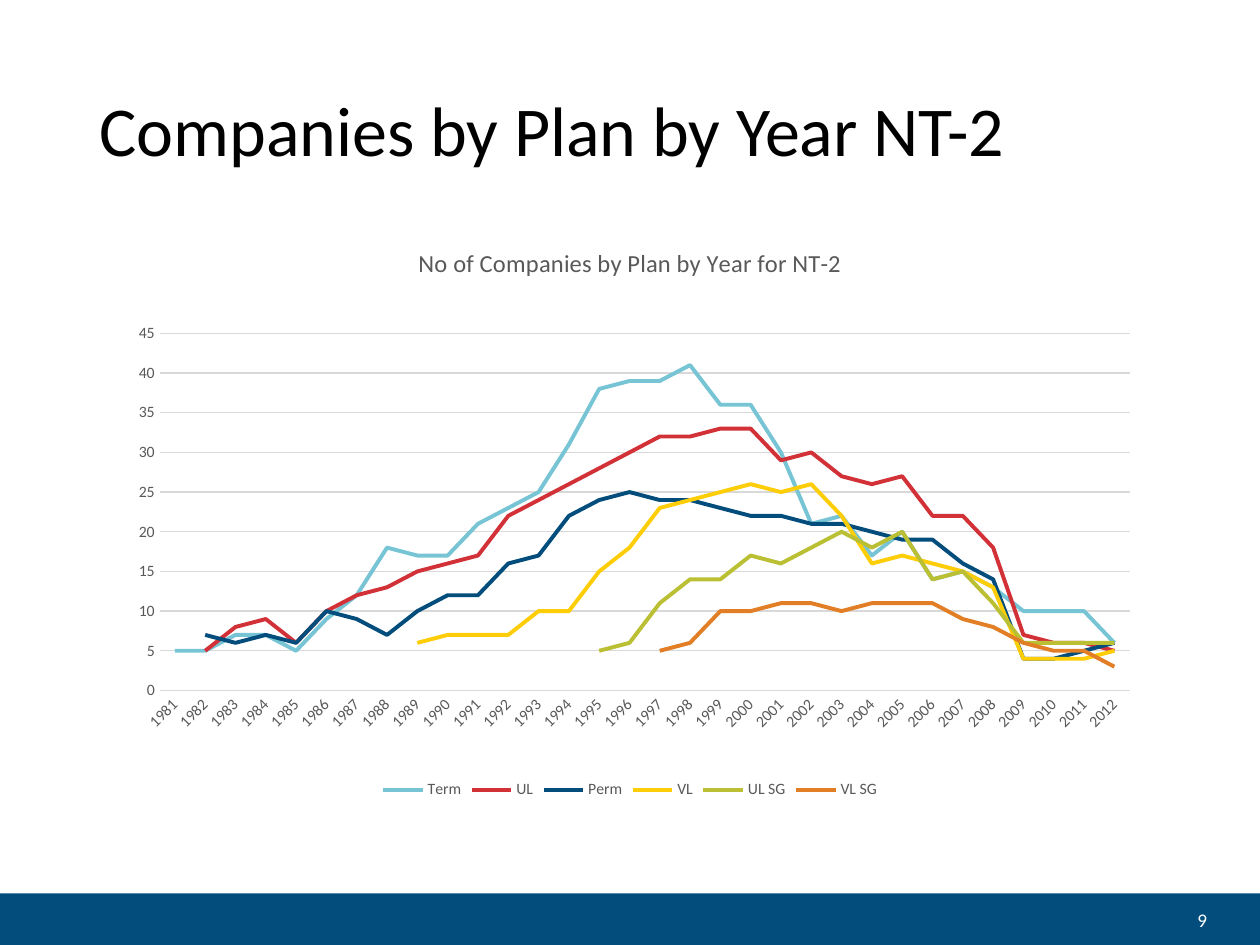
from dataclasses import dataclass

from lxml import etree
from pptx import Presentation
from pptx import util as u
from pptx.chart.data import CategoryChartData
from pptx.dml.color import RGBColor
from pptx.enum import chart as charts, shapes, text
from pptx.oxml.ns import qn

FONT = "Calibri"
BLACK = RGBColor(0x00, 0x00, 0x00)
WHITE = RGBColor(0xFF, 0xFF, 0xFF)
GREY = RGBColor(0x59, 0x59, 0x59)
RULE = RGBColor(0xD9, 0xD9, 0xD9)
NAVY = RGBColor(0x02, 0x4D, 0x7C)
AQUA = RGBColor(0x77, 0xC4, 0xD5)
RED = RGBColor(0xD2, 0x31, 0x38)
YELLOW = RGBColor(0xFD, 0xCE, 0x07)
LIME = RGBColor(0xBA, 0xBF, 0x33)
ORANGE = RGBColor(0xE2, 0x7F, 0x26)
YEARS = range(1981, 2013)


@dataclass
class Plan:
    name: str
    color: RGBColor
    companies: list[int]

    def by_year(self) -> list[int | None]:
        return [None] * (len(YEARS) - len(self.companies)) + self.companies


@dataclass
class Label:
    wording: str
    left: float
    top: float
    width: float
    height: float
    size: float
    color: RGBColor
    align: text.PP_ALIGN
    spacing: float = 1.0


PLANS = [
    Plan("Term", AQUA, [5, 5, 7, 7, 5, 9, 12, 18, 17, 17, 21, 23, 25, 31, 38, 39, 39, 41,
                        36, 36, 30, 21, 22, 17, 20, 14, 15, 13, 10, 10, 10, 6]),
    Plan("UL", RED, [5, 8, 9, 6, 10, 12, 13, 15, 16, 17, 22, 24, 26, 28, 30, 32, 32, 33,
                     33, 29, 30, 27, 26, 27, 22, 22, 18, 7, 6, 6, 5]),
    Plan("Perm", NAVY, [7, 6, 7, 6, 10, 9, 7, 10, 12, 12, 16, 17, 22, 24, 25, 24, 24, 23,
                        22, 22, 21, 21, 20, 19, 19, 16, 14, 4, 4, 5, 6]),
    Plan("VL", YELLOW, [6, 7, 7, 7, 10, 10, 15, 18, 23, 24, 25, 26, 25, 26, 22, 16, 17,
                        16, 15, 13, 4, 4, 4, 5]),
    Plan("UL SG", LIME, [5, 6, 11, 14, 14, 17, 16, 18, 20, 18, 20, 14, 15, 11, 6, 6, 6, 6]),
    Plan("VL SG", ORANGE, [5, 6, 10, 10, 11, 11, 10, 11, 11, 11, 9, 8, 6, 5, 5, 3]),
]
LABELS = [
    Label("Companies by Plan by Year NT-2", 0.69, 0.36, 8.62, 1.4, 40, BLACK,
          text.PP_ALIGN.LEFT, 0.9),
    Label("9", 9.01, 7.1, 0.67, 0.4, 11, WHITE, text.PP_ALIGN.RIGHT),
]


def style_font(font, size: float, color: RGBColor) -> None:
    font.name = FONT
    font.size = u.Pt(size)
    font.bold = False
    font.color.rgb = color


def style_line(line, color: RGBColor, width: float) -> None:
    line.color.rgb = color
    line.width = u.Pt(width)


def add_label(page, label: Label) -> None:
    box = page.shapes.add_textbox(u.Inches(label.left), u.Inches(label.top),
                                  u.Inches(label.width), u.Inches(label.height))
    frame = box.text_frame
    frame.word_wrap = True
    frame.vertical_anchor = text.MSO_ANCHOR.MIDDLE
    frame.text = label.wording
    para = frame.paragraphs[0]
    para.alignment = label.align
    para.line_spacing = label.spacing
    style_font(para.runs[0].font, label.size, label.color)


def add_footer_band(page) -> None:
    band = page.shapes.add_shape(shapes.MSO_SHAPE.RECTANGLE, 0, u.Inches(7.09),
                                 u.Inches(10), u.Inches(0.41))
    band.shadow.inherit = False
    band.fill.solid()
    band.fill.fore_color.rgb = NAVY
    band.line.fill.background()


def place_plot(chart, left: float, top: float, width: float, height: float) -> None:
    plot_area = chart.plots[0]._element.getparent()
    for old in plot_area.findall(qn("c:layout")):
        plot_area.remove(old)
    layout = etree.Element(qn("c:layout"))
    manual = etree.SubElement(layout, qn("c:manualLayout"))
    settings = {"layoutTarget": "inner", "xMode": "edge", "yMode": "edge",
                "x": left, "y": top, "w": width, "h": height}
    for tag, value in settings.items():
        etree.SubElement(manual, qn(f"c:{tag}")).set("val", str(value))
    plot_area.insert(0, layout)


def style_axis(axis) -> None:
    axis.major_tick_mark = charts.XL_TICK_MARK.NONE
    axis.minor_tick_mark = charts.XL_TICK_MARK.NONE
    style_font(axis.tick_labels.font, 9, GREY)


def add_plan_chart(page) -> None:
    data = CategoryChartData()
    data.categories = [str(year) for year in YEARS]
    for plan in PLANS:
        data.add_series(plan.name, plan.by_year())
    chart = page.shapes.add_chart(charts.XL_CHART_TYPE.LINE, u.Inches(0.69), u.Inches(1.77),
                                  u.Inches(8.62), u.Inches(4.61), data).chart
    style_font(chart.font, 10, BLACK)
    place_plot(chart, 0.067, 0.19, 0.893, 0.615)

    chart.has_title = True
    title = chart.chart_title
    title.include_in_layout = False
    title.text_frame.text = "No of Companies by Plan by Year for NT-2"
    style_font(title.text_frame.paragraphs[0].runs[0].font, 14, GREY)

    chart.has_legend = True
    chart.legend.position = charts.XL_LEGEND_POSITION.BOTTOM
    chart.legend.include_in_layout = False
    style_font(chart.legend.font, 9, GREY)

    years, counts = chart.category_axis, chart.value_axis
    style_axis(years)
    style_line(years.format.line, RULE, 0.75)
    years._element.find(qn("c:txPr")).find(qn("a:bodyPr")).set("rot", "-2700000")
    style_axis(counts)
    counts.format.line.fill.background()
    counts.minimum_scale, counts.maximum_scale, counts.major_unit = 0, 45, 5
    counts.has_major_gridlines = True
    style_line(counts.major_gridlines.format.line, RULE, 0.75)

    chart.plots[0].vary_by_categories = False
    for series, plan in zip(chart.plots[0].series, PLANS):
        series.smooth = False
        series.marker.style = charts.XL_MARKER_STYLE.NONE
        style_line(series.format.line, plan.color, 2.25)


def main() -> None:
    deck = Presentation()
    deck.slide_width = u.Inches(10)
    deck.slide_height = u.Inches(7.5)
    page = deck.slides.add_slide(deck.slide_layouts[6])
    add_footer_band(page)
    add_plan_chart(page)
    for label in LABELS:
        add_label(page, label)
    deck.save("out.pptx")


if __name__ == "__main__":
    main()
